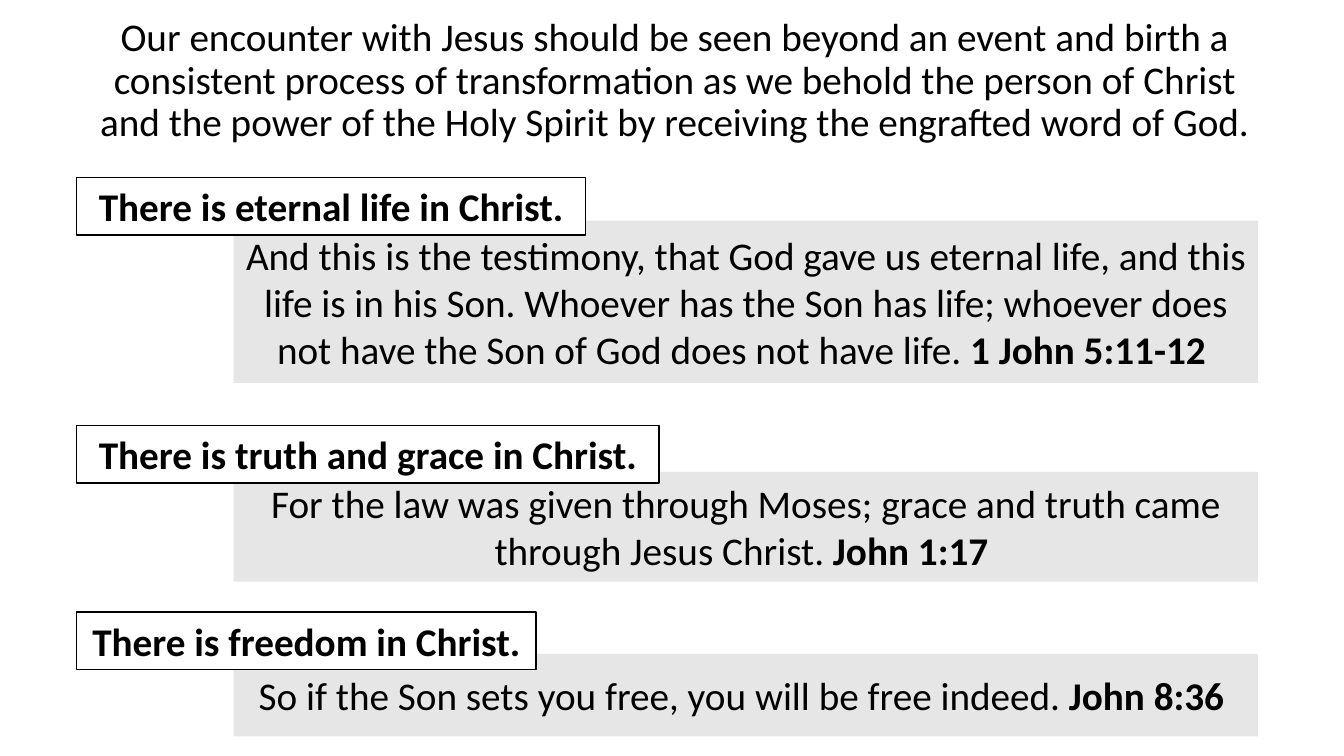
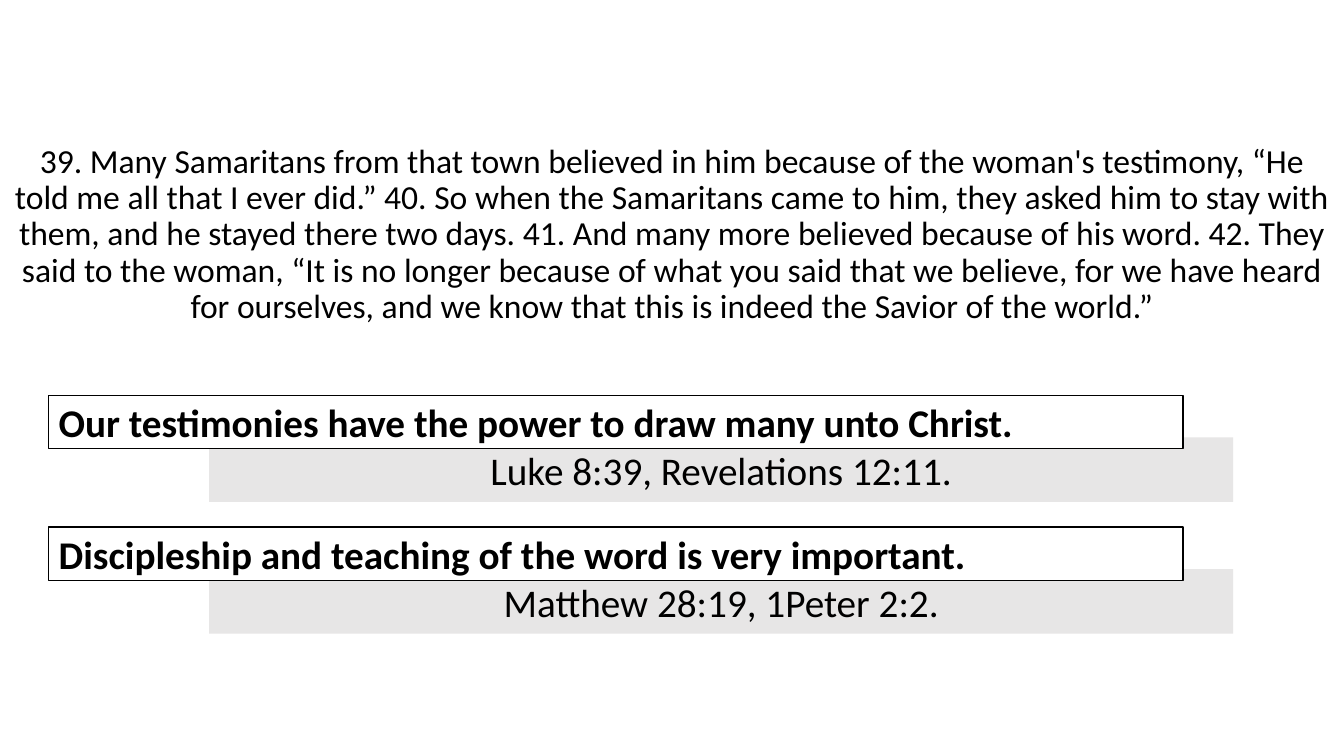
from dataclasses import dataclass

from pptx import Presentation
from pptx import util as u
from pptx.dml.color import RGBColor
from pptx.enum import shapes, text


@dataclass(frozen=True)
class Theme:
    font: str = "Calibri"
    ink: RGBColor = RGBColor(0x00, 0x00, 0x00)
    paper: RGBColor = RGBColor(0xFF, 0xFF, 0xFF)
    band: RGBColor = RGBColor(0xE7, 0xE6, 0xE6)
    point_size: int = 28
    passage_size: int = 24
    outline: int = 1


THEME = Theme()
SLIDE_WIDTH, SLIDE_HEIGHT = 33.87, 19.05
BAND_WIDTH = 25.81

ENCOUNTER = (
    "Our encounter with Jesus should be seen beyond an event and birth a "
    "consistent process of transformation as we behold the person of Christ "
    "and the power of the Holy Spirit by receiving the engrafted word of God."
)
# Heading, heading top, heading width, band top, band height, verse, reference
GIFTS = [
    ("There is eternal life in Christ.", 4.47, 12.83, 5.56, 4.09,
     "And this is the testimony, that God gave us eternal life, and this life "
     "is in his Son. Whoever has the Son has life; whoever does not have the "
     "Son of God does not have life.", " 1 John 5:11-12 "),
    ("There is truth and grace in Christ.", 10.72, 14.68, 11.89, 2.77,
     "For the law was given through Moses; grace and truth came through Jesus "
     "Christ.", " John 1:17 "),
    ("There is freedom in Christ.", 15.42, 11.58, 16.48, 2.08,
     "So if the Son sets you free, you will be free indeed.", " John 8:36 "),
]

SAMARITANS = (
    "39. Many Samaritans from that town believed in him because of the woman's "
    "testimony, “He told me all that I ever did.” 40. So when the Samaritans "
    "came to him, they asked him to stay with them, and he stayed there two "
    "days. 41. And many more believed because of his word. 42. They said to "
    "the woman, “It is no longer because of what you said that we believe, for "
    "we have heard for ourselves, and we know that this is indeed the Savior "
    "of the world.”"
)
LESSONS = [
    ("Our testimonies have the power to draw many unto Christ.",
     "Luke 8:39, Revelations 12:11."),
    ("Discipleship and teaching of the word is very important.",
     "Matthew 28:19, 1Peter 2:2."),
]


def write(frame, runs, size, align):
    """Fill a text frame with one paragraph of (words, bold) runs."""
    frame.word_wrap = True
    paragraph = frame.paragraphs[0]
    paragraph.alignment = align
    for words, bold in runs:
        run = paragraph.add_run()
        run.text = words
        run.font.name = THEME.font
        run.font.size = u.Pt(size)
        run.font.bold = bold
        run.font.color.rgb = THEME.ink
    return paragraph


def add_passage(slide, box, words, size):
    passage = slide.shapes.add_textbox(*map(u.Cm, box))
    paragraph = write(passage.text_frame, [(words, False)], size,
                      text.PP_ALIGN.CENTER)
    paragraph.line_spacing = 0.9


def add_panel(slide, box, fill, runs, align=text.PP_ALIGN.CENTER):
    panel = slide.shapes.add_shape(shapes.MSO_SHAPE.RECTANGLE, *map(u.Cm, box))
    panel.shadow.inherit = False
    panel.fill.solid()
    panel.fill.fore_color.rgb = fill
    panel.line.fill.background()
    panel.text_frame.vertical_anchor = text.MSO_ANCHOR.MIDDLE
    write(panel.text_frame, runs, THEME.point_size, align)
    return panel


def add_band(slide, box, runs):
    add_panel(slide, box, THEME.band, runs)


def add_heading(slide, box, words, align=text.PP_ALIGN.CENTER):
    heading = add_panel(slide, box, THEME.paper, [(words, True)], align)
    heading.line.color.rgb = THEME.ink
    heading.line.width = u.Pt(THEME.outline)


def add_blank_slide(deck):
    return deck.slides.add_slide(deck.slide_layouts[6])


def build_gifts(deck):
    slide = add_blank_slide(deck)
    add_passage(slide, (1.9, 0.33, 30.2, 4.01), ENCOUNTER, THEME.point_size)
    for heading, top, width, band_top, band_height, verse, reference in GIFTS:
        add_band(slide, (5.89, band_top, BAND_WIDTH, band_height),
                 [(verse, False), (reference, True)])
        add_heading(slide, (1.93, top, width, 1.45), heading)


def build_lessons(deck):
    slide = add_blank_slide(deck)
    add_passage(slide, (0, 3.51, SLIDE_WIDTH, 5.31), SAMARITANS,
                THEME.passage_size)
    first_top, pitch, band_drop = 9.96, 3.32, 1.06
    for index, (heading, references) in enumerate(LESSONS):
        top = first_top + index * pitch
        add_band(slide, (5.27, top + band_drop, BAND_WIDTH, 1.63),
                 [(references, False)])
        add_heading(slide, (1.23, top, 28.58, 1.35), heading,
                    text.PP_ALIGN.LEFT)


def main():
    deck = Presentation()
    deck.slide_width = u.Cm(SLIDE_WIDTH)
    deck.slide_height = u.Cm(SLIDE_HEIGHT)
    build_gifts(deck)
    build_lessons(deck)
    deck.save("out.pptx")


if __name__ == "__main__":
    main()
